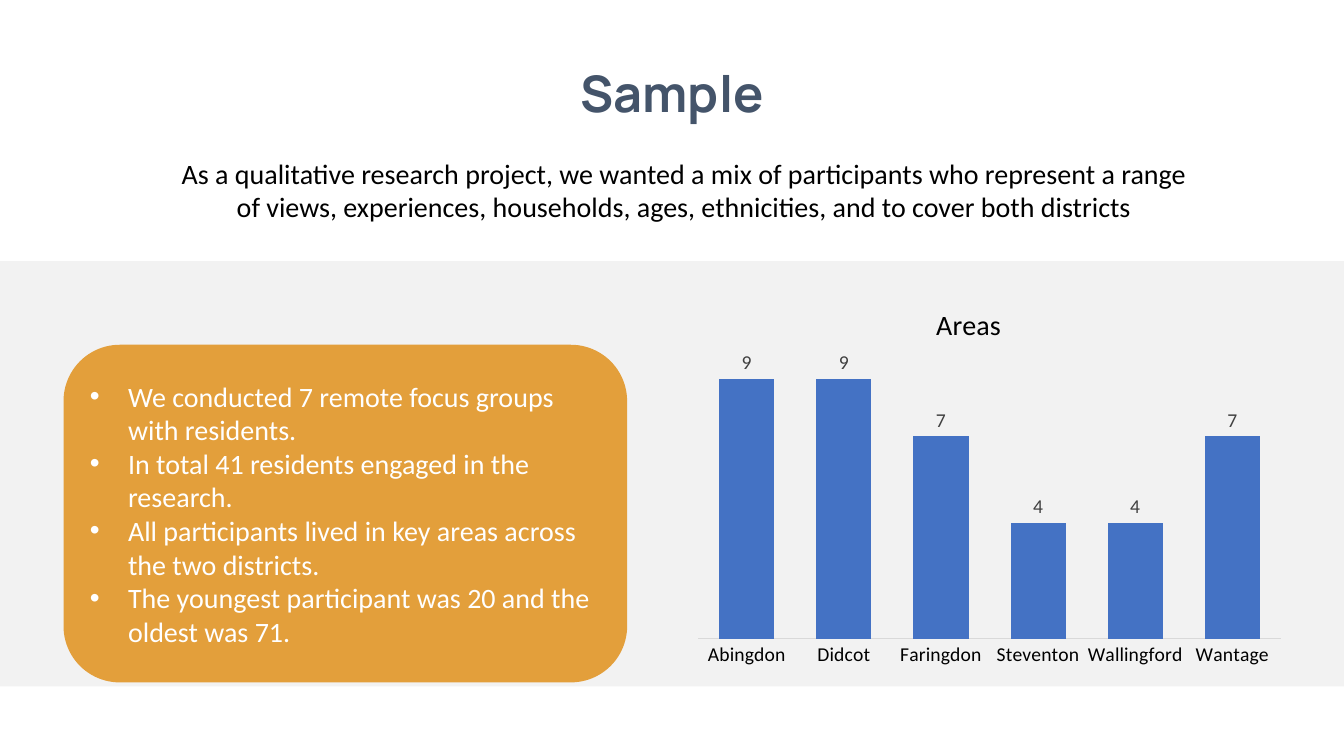
from dataclasses import dataclass

from lxml.etree import SubElement
from pptx import Presentation
from pptx.chart.data import CategoryChartData
from pptx.dml.color import RGBColor
from pptx.enum.chart import XL_CHART_TYPE as ChartType
from pptx.enum.chart import XL_LABEL_POSITION as LabelPos
from pptx.enum.chart import XL_TICK_MARK as TickMark
from pptx.enum.shapes import MSO_SHAPE as Shape
from pptx.enum.text import MSO_ANCHOR as Anchor
from pptx.enum.text import MSO_AUTO_SIZE as AutoSize
from pptx.enum.text import PP_ALIGN as Align
from pptx.oxml.ns import qn
from pptx.util import Inches, Pt


@dataclass(frozen=True)
class Theme:
    heading_font: str = "Manrope"
    body_font: str = "Calibri"
    heading: str = "44546A"
    text: str = "000000"
    band: str = "F2F2F2"
    card: str = "E39F3B"
    card_text: str = "FFFFFF"
    bar: str = "4472C4"
    label: str = "404040"
    axis: str = "D9D9D9"
    title_size: int = 36
    body_size: int = 20
    label_size: int = 14


THEME = Theme()

INTRO = ("As a qualitative research project, we wanted a mix of participants "
         "who represent a range of views, experiences, households, ages, "
         "ethnicities, and to cover both districts")
FINDINGS = [
    "We conducted 7 remote focus groups with residents.",
    "In total 41 residents engaged in the research.",
    "All participants lived in key areas across the two districts.",
    "The youngest participant was 20 and the oldest was 71.",
]
AREAS = {"Abingdon": 9, "Didcot": 9, "Faringdon": 7,
         "Steventon": 4, "Wallingford": 4, "Wantage": 7}
PLOT_AREA = {"x": 0.067, "y": 0.158, "w": 0.933, "h": 0.721}


def apply(target, values):
    for name, value in values.items():
        setattr(target, name, value)


def style_font(font, size, color, name=THEME.body_font, bold=False):
    apply(font, {"size": Pt(size), "name": name, "bold": bold})
    font.color.rgb = RGBColor.from_string(color)


def place(sp, left, top, width, height):
    apply(sp, {"left": Inches(left), "top": Inches(top),
               "width": Inches(width), "height": Inches(height)})


def add_panel(slide, kind, box, color):
    """Add a plain filled shape behind the text placeholders."""
    sp = slide.shapes.add_shape(kind, *map(Inches, box))
    sp.shadow.inherit = False
    sp.fill.solid()
    sp.fill.fore_color.rgb = RGBColor.from_string(color)
    sp.line.fill.background()
    first = slide.shapes.title._element
    first.addprevious(sp._element)


def set_title(slide, text):
    sp = slide.shapes.title
    place(sp, 5.57, 0.57, 2.19, 0.71)
    tf = sp.text_frame
    tf.text = text
    apply(tf, {"word_wrap": False, "vertical_anchor": Anchor.TOP,
               "auto_size": AutoSize.SHAPE_TO_FIT_TEXT})
    p = tf.paragraphs[0]
    p.alignment = Align.CENTER
    style_font(p.runs[0].font, THEME.title_size, THEME.heading,
               THEME.heading_font, bold=True)


def set_bullets(slide, items):
    sp = slide.placeholders[1]
    place(sp, 0.79, 3.58, 5.27, 3.03)
    tf = sp.text_frame
    tf.text = "\n".join(items)
    apply(tf, {"word_wrap": True, "vertical_anchor": Anchor.MIDDLE,
               "auto_size": AutoSize.NONE})
    for p in tf.paragraphs:
        apply(p, {"alignment": Align.LEFT, "space_before": Pt(0)})
        style_font(p.runs[0].font, THEME.body_size, THEME.card_text)
        props = p._p.get_or_add_pPr()
        indent = Inches(0.38)
        props.set("marL", str(indent))
        props.set("indent", str(-indent))
        SubElement(props, qn("a:buFont"), typeface="Arial")
        SubElement(props, qn("a:buChar"), char="•")


def add_intro(slide, text):
    box = (1.58, 1.5, 10.41, 0.77)
    tf = slide.shapes.add_textbox(*map(Inches, box)).text_frame
    tf.text = text
    apply(tf, {"word_wrap": True, "auto_size": AutoSize.SHAPE_TO_FIT_TEXT})
    p = tf.paragraphs[0]
    p.alignment = Align.CENTER
    style_font(p.runs[0].font, THEME.body_size, THEME.text)


def set_plot_layout(chart, fractions):
    """Fix the inner plot area, in fractions of the chart's size."""
    plot_area = chart._chartSpace.chart.plotArea
    layout = plot_area.find(qn("c:layout"))
    if layout is None:
        layout = SubElement(plot_area, qn("c:layout"))
        plot_area.insert(0, layout)
    manual = SubElement(layout, qn("c:manualLayout"))
    settings = {"layoutTarget": "inner", "xMode": "edge", "yMode": "edge",
                **fractions}
    for tag, value in settings.items():
        SubElement(manual, qn(f"c:{tag}"), val=str(value))


def add_area_chart(slide, title, areas):
    data = CategoryChartData()
    data.categories = list(areas)
    data.add_series("Series 1", list(areas.values()))
    box = (6.51, 2.84, 6.2, 3.98)
    chart = slide.shapes.add_chart(
        ChartType.COLUMN_CLUSTERED, *map(Inches, box), data).chart
    style_font(chart.font, THEME.label_size, THEME.text)
    chart.has_legend = False
    chart.has_title = True
    chart.chart_title.include_in_layout = False
    tf = chart.chart_title.text_frame
    tf.text = title
    style_font(tf.paragraphs[0].runs[0].font, THEME.body_size, THEME.text)

    apply(chart.value_axis, {"visible": False, "has_major_gridlines": False,
                             "minimum_scale": 0, "maximum_scale": 10})
    axis = chart.category_axis
    apply(axis, {"major_tick_mark": TickMark.NONE,
                 "minor_tick_mark": TickMark.NONE})
    style_font(axis.tick_labels.font, THEME.label_size, THEME.text)
    axis.format.line.color.rgb = RGBColor.from_string(THEME.axis)
    axis.format.line.width = Pt(0.75)

    plot = chart.plots[0]
    apply(plot, {"gap_width": 76, "overlap": -27,
                 "vary_by_categories": False, "has_data_labels": True})
    labels = plot.data_labels
    apply(labels, {"show_value": True, "position": LabelPos.OUTSIDE_END})
    style_font(labels.font, THEME.label_size, THEME.label)
    fill = plot.series[0].format.fill
    fill.solid()
    fill.fore_color.rgb = RGBColor.from_string(THEME.bar)
    set_plot_layout(chart, PLOT_AREA)


def main():
    prs = Presentation()
    prs.slide_width, prs.slide_height = Inches(13.33), Inches(7.5)
    slide = prs.slides.add_slide(prs.slide_layouts[1])
    add_panel(slide, Shape.RECTANGLE, (0, 2.59, 13.33, 4.22), THEME.band)
    add_panel(slide, Shape.ROUNDED_RECTANGLE, (0.63, 3.42, 5.59, 3.35),
              THEME.card)
    set_title(slide, "Sample")
    set_bullets(slide, FINDINGS)
    add_intro(slide, INTRO)
    add_area_chart(slide, "Areas", AREAS)
    prs.save("out.pptx")


if __name__ == "__main__":
    main()
